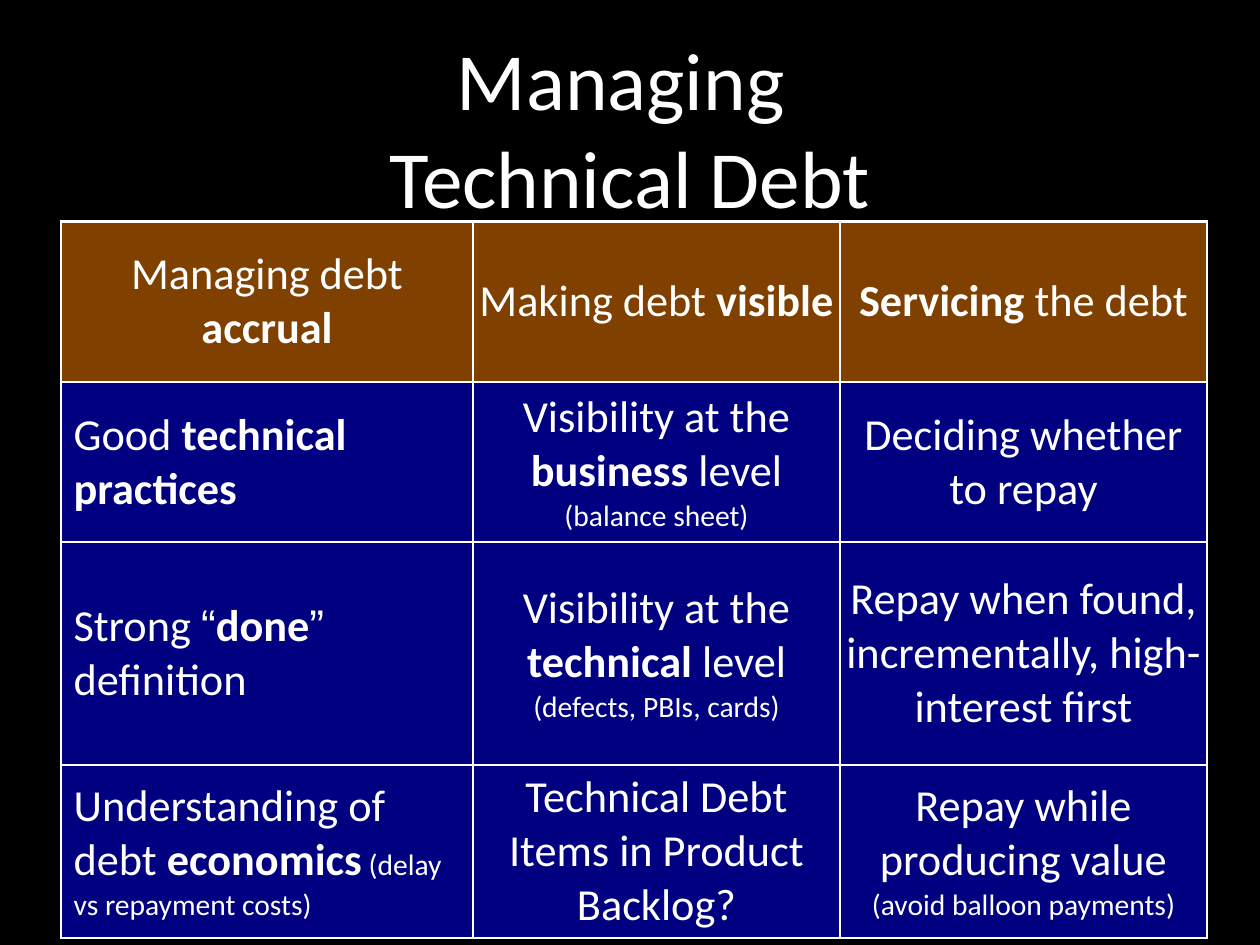
import lxml.etree
import pptx
import pptx.dml.color
import pptx.enum.text
import pptx.oxml.ns
import pptx.util

Cm = pptx.util.Cm
Pt = pptx.util.Pt
ALIGN = pptx.enum.text.PP_ALIGN
MIDDLE = pptx.enum.text.MSO_ANCHOR.MIDDLE

WHITE, BLACK, BROWN, NAVY = "FFFFFF", "000000", "804000", "000080"
BOLD = {"bold": True}
SMALL = {"size": 24}
QUOTE = {"font": "Arial"}
NARROW, WIDE = Cm(0.15), Cm(0.36)
COLUMN_WIDTHS = [11.81, 10.52, 10.52]
ROW_HEIGHTS = [4.6, 4.6, 6.38, 4.85]

ROWS = [
    [
        [[("Managing debt ", {}), ("accrual", BOLD)]],
        [[("Making debt ", {}), ("visible", BOLD)]],
        [[("Servicing", BOLD), (" the debt", {})]],
    ],
    [
        [[("Good ", {}), ("technical practices", BOLD)]],
        [[("Visibility at the ", {}), ("business", BOLD), (" level ", {}),
          ("(balance sheet)", SMALL)]],
        [[("Deciding whether to repay", {})]],
    ],
    [
        [[("Strong ", {}), ("“", QUOTE), ("done", BOLD), ("”", QUOTE), (" definition", {})]],
        [[("Visibility at the ", {}), ("technical", BOLD), (" level ", {}),
          ("(defects, PBIs, cards)", SMALL)]],
        [[("Repay when found, incrementally, high-interest first", {})]],
    ],
    [
        [[("Understanding of debt ", {}), ("economics", BOLD),
          (" (delay vs repayment costs)", SMALL)]],
        [[("Technical Debt", {})], [("Items in Product Backlog?", {})]],
        [[("Repay while producing value\n", {}), ("(avoid balloon payments)", SMALL)]],
    ],
]


def colour(code):
    """Return the colour for a hex string."""
    return pptx.dml.color.RGBColor.from_string(code)


def write_span(para, text, size=36, bold=False, font="Calibri", ink=WHITE):
    """Add formatted text to a paragraph, turning newlines into line breaks."""
    for number, line in enumerate(text.split("\n")):
        if number:
            para.add_line_break()
        if line:
            span = para.add_run()
            span.text = line
            span.font.size = Pt(size)
            span.font.bold = bold
            span.font.name = font
            span.font.color.rgb = colour(ink)


def set_margins(holder, margin):
    """Give a cell or text frame the same margin on every side."""
    holder.margin_left = holder.margin_right = margin
    holder.margin_top = holder.margin_bottom = margin
    holder.vertical_anchor = MIDDLE


def set_borders(cell, code, width):
    """Draw a solid border on all four sides of a cell."""
    properties = cell._tc.get_or_add_tcPr()
    for side in ("lnL", "lnR", "lnT", "lnB"):
        line = lxml.etree.SubElement(
            properties, pptx.oxml.ns.qn(f"a:{side}"), w=str(Pt(width)))
        fill = lxml.etree.SubElement(line, pptx.oxml.ns.qn("a:solidFill"))
        lxml.etree.SubElement(fill, pptx.oxml.ns.qn("a:srgbClr"), val=code)


def add_title(page, text):
    """Place and format the title."""
    title = page.shapes.title
    title.left, title.top = Cm(3.53), Cm(0.71)
    title.width, title.height = Cm(29.06), Cm(5.87)
    frame = title.text_frame
    frame.word_wrap = True
    frame.auto_size = pptx.enum.text.MSO_AUTO_SIZE.NONE
    set_margins(frame, NARROW)
    para = frame.paragraphs[0]
    para.alignment = ALIGN.CENTER
    write_span(para, text, size=66)


def fill_cell(cell, paragraphs, back, align, margin):
    """Write and format one table cell."""
    set_margins(cell, margin)
    set_borders(cell, WHITE, 2)
    cell.fill.solid()
    cell.fill.fore_color.rgb = colour(back)
    frame = cell.text_frame
    for number, spans in enumerate(paragraphs):
        para = frame.add_paragraph() if number else frame.paragraphs[0]
        para.alignment = align
        for text, options in spans:
            write_span(para, text, **options)


def add_debt_table(page):
    """Add the table of ways to manage technical debt."""
    table = page.shapes.add_table(
        len(ROWS), len(COLUMN_WIDTHS), Cm(1.75), Cm(6.35),
        Cm(sum(COLUMN_WIDTHS)), Cm(sum(ROW_HEIGHTS))).table
    table.first_row = table.horz_banding = False
    for column, width in zip(table.columns, COLUMN_WIDTHS):
        column.width = Cm(width)
    for row, height in zip(table.rows, ROW_HEIGHTS):
        row.height = Cm(height)
    for row_number, row in enumerate(ROWS):
        for column_number, paragraphs in enumerate(row):
            practice = row_number > 0 and column_number == 0
            fill_cell(
                table.cell(row_number, column_number), paragraphs,
                back=NAVY if row_number else BROWN,
                align=ALIGN.LEFT if practice else ALIGN.CENTER,
                margin=WIDE if practice else NARROW)


def main():
    """Build and save the slide."""
    deck = pptx.Presentation()
    deck.slide_width, deck.slide_height = Cm(36.12), Cm(27.1)
    page = deck.slides.add_slide(deck.slide_layouts[5])
    page.background.fill.solid()
    page.background.fill.fore_color.rgb = colour(BLACK)
    add_title(page, "Managing \nTechnical Debt")
    add_debt_table(page)
    deck.save("out.pptx")


if __name__ == "__main__":
    main()
